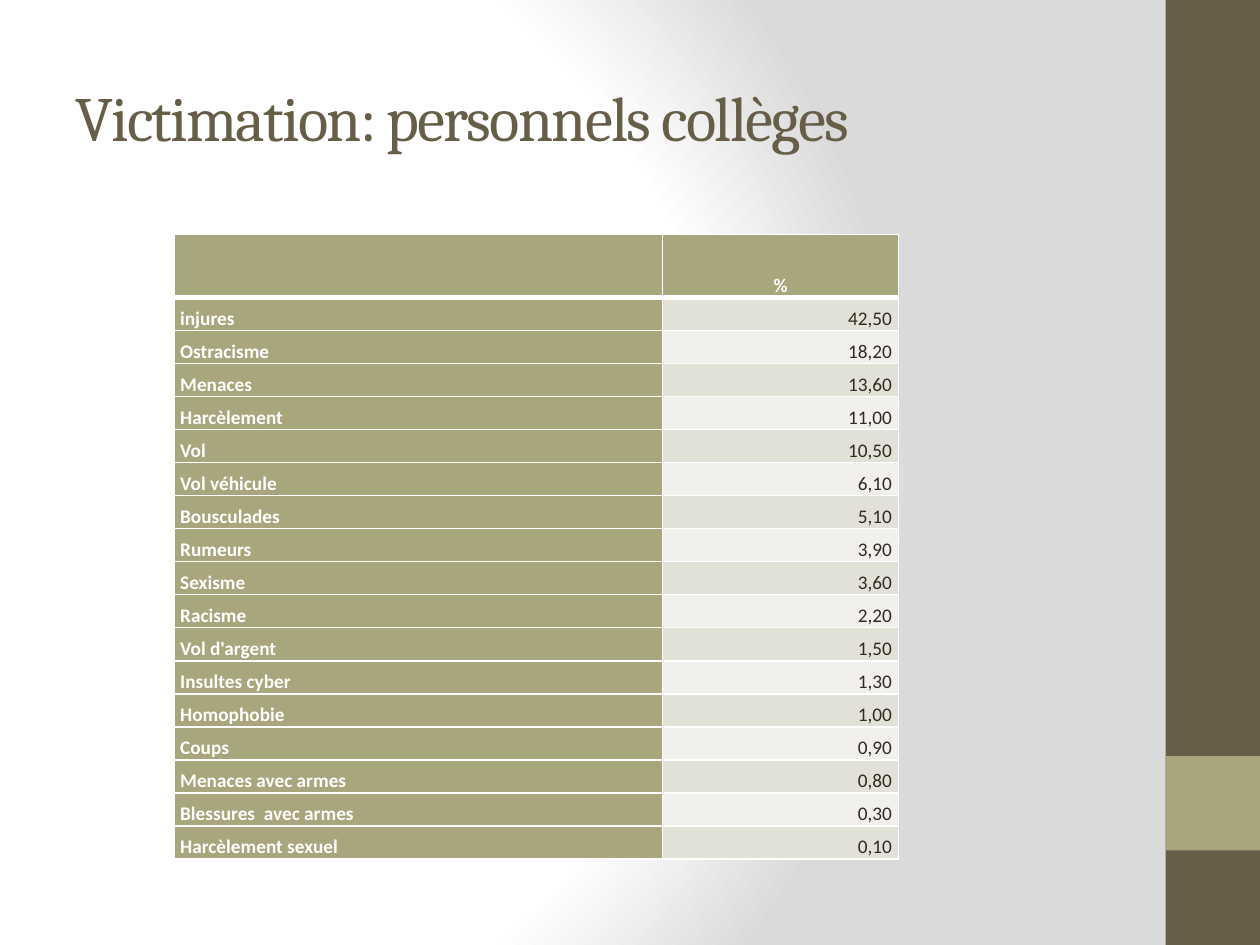
from typing import NamedTuple

from pptx import Presentation
from pptx.dml.color import RGBColor
from pptx.enum.shapes import MSO_SHAPE
from pptx.enum.text import MSO_ANCHOR, PP_ALIGN
from pptx.oxml import parse_xml
from pptx.oxml.ns import nsdecls
from pptx.util import Inches, Pt

RECT = MSO_SHAPE.RECTANGLE
MIDDLE, BOTTOM = MSO_ANCHOR.MIDDLE, MSO_ANCHOR.BOTTOM
LEFT, CENTER, RIGHT = PP_ALIGN.LEFT, PP_ALIGN.CENTER, PP_ALIGN.RIGHT

BROWN = RGBColor(0x67, 0x5E, 0x47)
OLIVE = RGBColor(0xA9, 0xA5, 0x7C)
DARK = RGBColor(0x2F, 0x2B, 0x20)
WHITE = RGBColor(0xFF, 0xFF, 0xFF)
GREY = RGBColor(0xDA, 0xDA, 0xDA)
BANDS = (RGBColor(0xE2, 0xE1, 0xD7), RGBColor(0xF1, 0xF0, 0xEC))

HEAD_H, TABLE_H = 0.5, 4.96
COLS = (3.88, 1.87)


class Bar(NamedTuple):
    top: float
    height: float
    color: RGBColor


class Act(NamedTuple):
    name: str
    rate: str


BARS = (Bar(0, 7.5, BROWN), Bar(6, 0.75, OLIVE))
ACTS = (
    Act("injures", "42,50"),
    Act("Ostracisme", "18,20"),
    Act("Menaces", "13,60"),
    Act("Harcèlement", "11,00"),
    Act("Vol", "10,50"),
    Act("Vol véhicule", "6,10"),
    Act("Bousculades", "5,10"),
    Act("Rumeurs", "3,90"),
    Act("Sexisme", "3,60"),
    Act("Racisme", "2,20"),
    Act("Vol d'argent", "1,50"),
    Act("Insultes cyber", "1,30"),
    Act("Homophobie", "1,00"),
    Act("Coups", "0,90"),
    Act("Menaces avec armes", "0,80"),
    Act("Blessures  avec armes", "0,30"),
    Act("Harcèlement sexuel", "0,10"),
)


def set_back(slide) -> None:
    """Give the slide a radial gradient, white to grey."""
    stops = "".join(
        f'<a:gs pos="{pos * 1000}"><a:srgbClr val="{color}"/></a:gs>'
        for pos, color in ((0, WHITE), (75, WHITE), (100, GREY))
    )
    slide.element.cSld.insert(0, parse_xml(
        f'<p:bg {nsdecls("p", "a")}><p:bgPr><a:gradFill rotWithShape="1">'
        f'<a:gsLst>{stops}</a:gsLst><a:path path="circle">'
        '<a:fillToRect l="20000" t="50000" r="100000" b="50000"/></a:path>'
        '</a:gradFill><a:effectLst/></p:bgPr></p:bg>'
    ))


def add_bar(slide, bar: Bar) -> None:
    shape = slide.shapes.add_shape(
        RECT, Inches(9.25), Inches(bar.top), Inches(0.75), Inches(bar.height))
    shape.shadow.inherit = False
    shape.fill.solid()
    shape.fill.fore_color.rgb = bar.color
    shape.line.fill.background()


def add_title(slide, text: str) -> None:
    box = slide.shapes.add_textbox(
        Inches(0.5), Inches(0.3), Inches(8.33), Inches(1.25))
    frame = box.text_frame
    frame.word_wrap = True
    frame.vertical_anchor = MIDDLE
    para = frame.paragraphs[0]
    run = para.add_run()
    run.text = text
    run.font.size = Pt(36)
    run.font.name = "Cambria"
    run.font.color.rgb = BROWN
    run.font._element.set("spc", "-100")


def set_edges(cell, top: float, bottom: float) -> None:
    """Draw white cell borders, with top and bottom widths in points."""
    props = cell._tc.get_or_add_tcPr()
    sides = (("L", 1), ("R", 1), ("T", top), ("B", bottom))
    for spot, (side, width) in enumerate(sides):
        props.insert(spot, parse_xml(
            f'<a:ln{side} {nsdecls("a")} w="{Pt(width)}"><a:solidFill>'
            f'<a:srgbClr val="{WHITE}"/></a:solidFill></a:ln{side}>'
        ))


def fill_cell(cell, text: str, fill: RGBColor, color: RGBColor,
              bold: bool, align: PP_ALIGN) -> None:
    cell.fill.solid()
    cell.fill.fore_color.rgb = fill
    cell.vertical_anchor = BOTTOM
    cell.margin_left = cell.margin_right = Inches(0.05)
    cell.margin_top = cell.margin_bottom = 0
    cell.text = text
    para = cell.text_frame.paragraphs[0]
    para.alignment = align
    para.line_spacing = 1.15
    para.font.size = Pt(11)
    para.font.name = "Calibri"
    para.font.bold = bold
    para.font.color.rgb = color


def add_rates(slide) -> None:
    table = slide.shapes.add_table(
        len(ACTS) + 1, len(COLS), Inches(1.38), Inches(1.86),
        Inches(sum(COLS)), Inches(TABLE_H)).table
    for col, width in zip(table.columns, COLS):
        col.width = Inches(width)
    for row in table.rows:
        row.height = Inches((TABLE_H - HEAD_H) / len(ACTS))
    table.rows[0].height = Inches(HEAD_H)

    for num, act in enumerate((Act("", "%"),) + ACTS):
        name, rate = table.rows[num].cells
        fill_cell(name, act.name, OLIVE, WHITE, True, LEFT)
        if num == 0:
            fill_cell(rate, act.rate, OLIVE, WHITE, True, CENTER)
        else:
            fill_cell(rate, act.rate, BANDS[(num - 1) % 2], DARK, False, RIGHT)
        for cell in (name, rate):
            set_edges(cell, 3 if num == 1 else 1, 3 if num == 0 else 1)


def main() -> None:
    deck = Presentation()
    deck.slide_width, deck.slide_height = Inches(10), Inches(7.5)
    slide = deck.slides.add_slide(deck.slide_layouts[6])
    set_back(slide)
    for bar in BARS:
        add_bar(slide, bar)
    add_title(slide, "Victimation: personnels collèges")
    add_rates(slide)
    deck.save("out.pptx")


if __name__ == "__main__":
    main()
